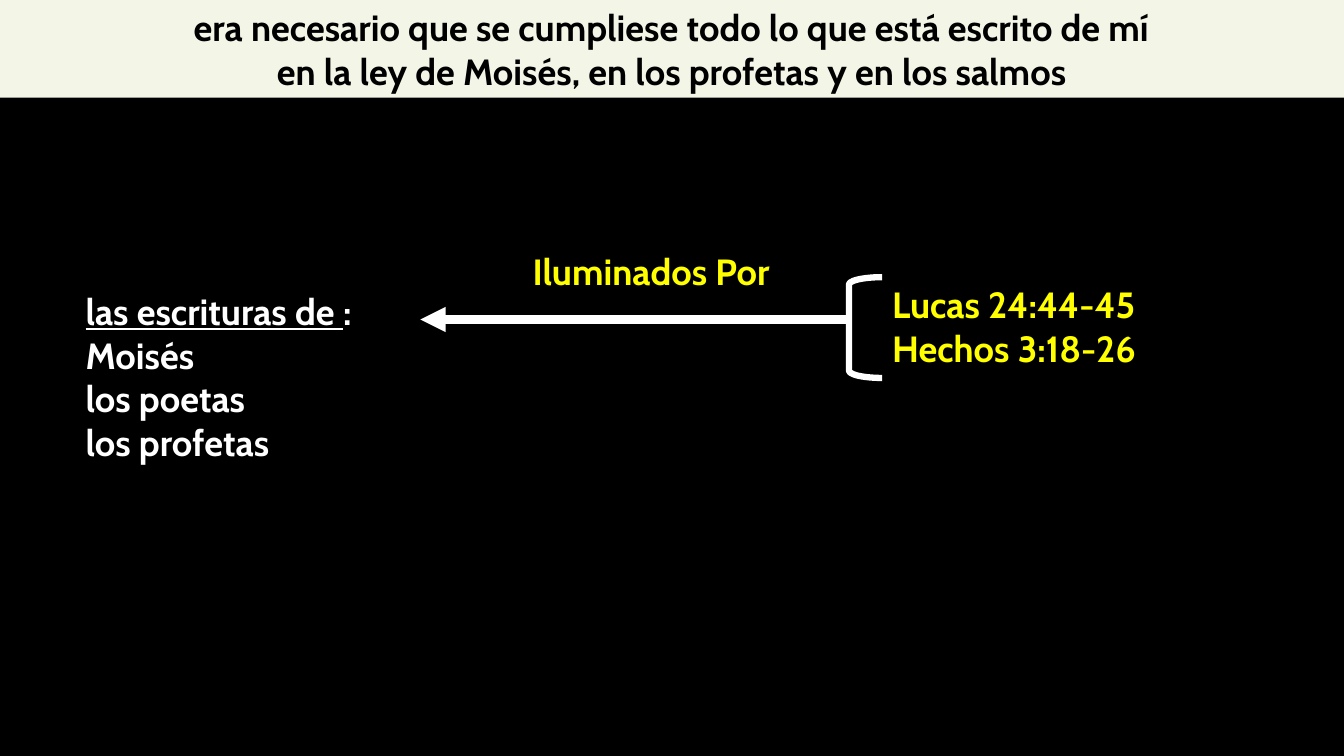
from lxml import etree
from pptx import Presentation
from pptx import util as u
from pptx.dml.color import RGBColor
from pptx.enum import shapes, text
from pptx.oxml.ns import qn

# Content: each line is a list of (words, underlined) spans
VERSE = [
    [("era necesario que se cumpliese todo lo que está escrito de mí", False)],
    [("en la ley de Moisés, en los profetas y en los salmos", False)],
]
SCRIPTURES = [
    [("las escrituras de ", True), (":", False)],
    [("Moisés", False)],
    [("los poetas", False)],
    [("los profetas", False)],
]
REFERENCES = [[("Lucas 24:44-45", False)], [("Hechos 3:18-26", False)]]
LABEL = [[("Iluminados Por", False)]]

BLACK, WHITE, YELLOW, CREAM = "000000", "FFFFFF", "FFFF00", "F3F6E6"
FONT = {"name": "Cabin", "size": u.Pt(26), "bold": True}
LEFT, CENTER = text.PP_ALIGN.LEFT, text.PP_ALIGN.CENTER

# Places: left, top, width, height
WIDTH, HEIGHT = 13.33, 7.5
BANNER = (0, 0, WIDTH, 0.97)
BRACKET = (8.42, 2.75, 0.33, 1)
TEXT_BOXES = [
    (SCRIPTURES, (0.75, 2.82, 3.58, 1.85), WHITE, LEFT),
    (REFERENCES, (BRACKET[0] + BRACKET[2], BRACKET[1], 4.25, 0.97), YELLOW, LEFT),
    (LABEL, (4.9, 2.42, 3.12, 0.54), YELLOW, CENTER),
]
ARROW_END, ARROW_Y = 4.17, 3.17


def color(value):
    return RGBColor.from_string(value)


def inches(values):
    return [u.Inches(value) for value in values]


def write(box, lines, ink, align):
    frame = box.text_frame
    frame.word_wrap = True
    for index, line in enumerate(lines):
        para = frame.paragraphs[0] if index == 0 else frame.add_paragraph()
        para.alignment = align
        for words, underlined in line:
            span = para.add_run()
            span.text = words
            for key, value in {**FONT, "underline": underlined}.items():
                setattr(span.font, key, value)
            span.font.color.rgb = color(ink)


def stroke(item, points):
    item.line.color.rgb = color(WHITE)
    item.line.width = u.Pt(points)


deck = Presentation()
deck.slide_width, deck.slide_height = inches((WIDTH, HEIGHT))
page = deck.slides.add_slide(deck.slide_layouts[6])
page.background.fill.solid()
page.background.fill.fore_color.rgb = color(BLACK)

# Scriptures, references and label
for lines, place, ink, align in TEXT_BOXES:
    write(page.shapes.add_textbox(*inches(place)), lines, ink, align)

# Bracket around the references
bracket = page.shapes.add_shape(shapes.MSO_SHAPE.LEFT_BRACKET, *inches(BRACKET))
bracket.adjustments[0] = 0.221
bracket.shadow.inherit = False
bracket.fill.background()
stroke(bracket, 4.5)

# Verse banner
banner = page.shapes.add_shape(shapes.MSO_SHAPE.RECTANGLE, *inches(BANNER))
banner.shadow.inherit = False
banner.fill.solid()
banner.fill.fore_color.rgb = color(CREAM)
banner.line.fill.background()
write(banner, VERSE, BLACK, CENTER)

# Arrow from the bracket to the scriptures
arrow = page.shapes.add_connector(
    shapes.MSO_CONNECTOR.STRAIGHT, *inches((BRACKET[0], ARROW_Y, ARROW_END, ARROW_Y)))
stroke(arrow, 6)
etree.SubElement(arrow.line._get_or_add_ln(), qn("a:tailEnd"), type="triangle")
etree.SubElement(arrow._element.spPr, qn("a:effectLst"))

deck.save("out.pptx")
